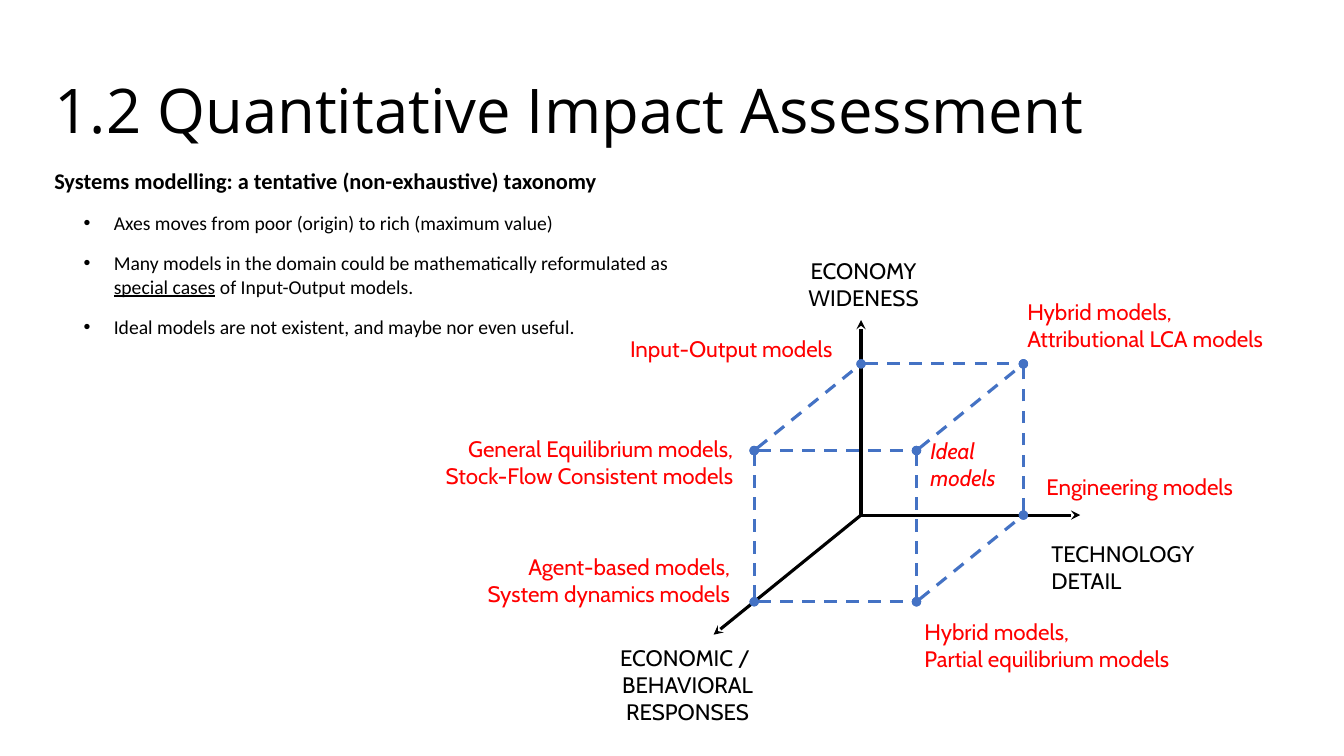
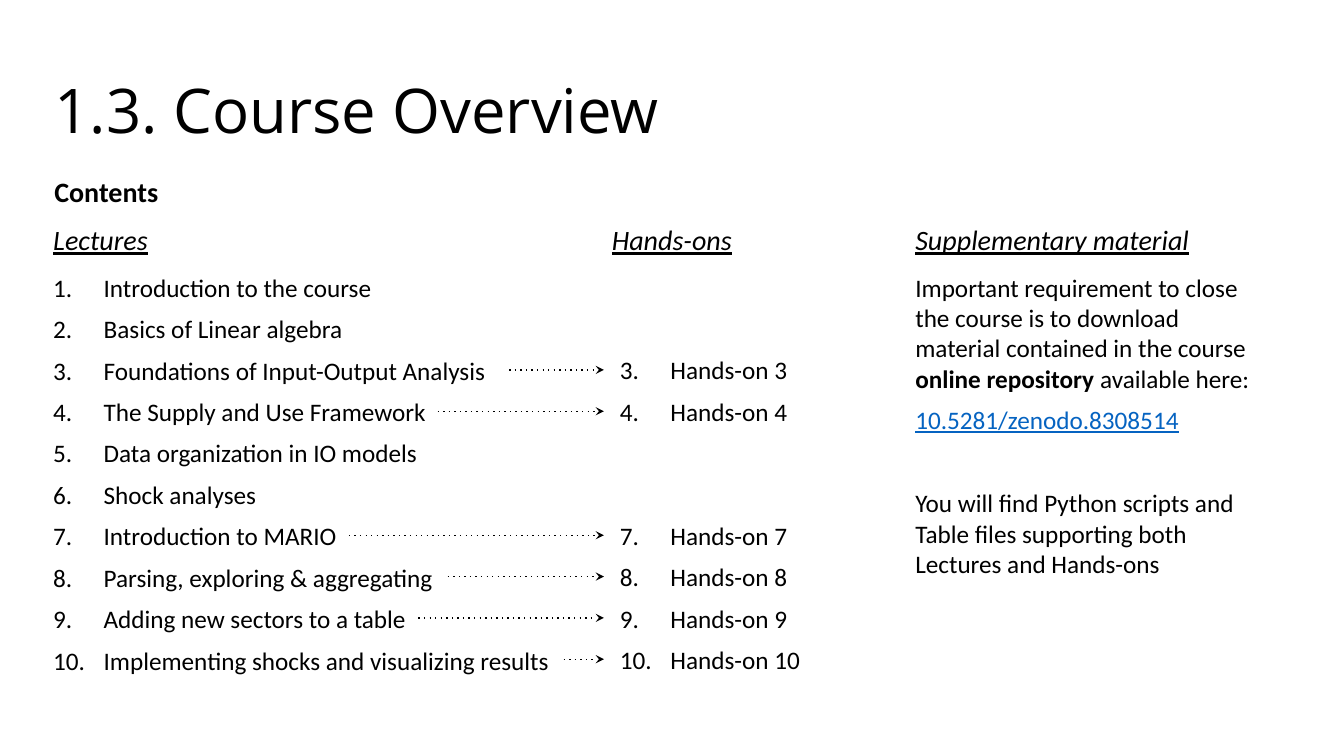
from dataclasses import dataclass
from itertools import product

from lxml.etree import SubElement as Sub
from pptx import Presentation
from pptx.dml.color import RGBColor as Rgb
from pptx.enum.shapes import MSO_CONNECTOR as Conn
from pptx.enum.text import MSO_ANCHOR as Anchor, MSO_AUTO_SIZE as Fit, PP_ALIGN as Align
from pptx.oxml.ns import qn
from pptx.util import Inches, Pt


@dataclass(frozen=True)
class Theme:
    black: Rgb = Rgb(0, 0, 0)
    red: Rgb = Rgb(0xFF, 0, 0)
    blue: Rgb = Rgb(0x44, 0x72, 0xC4)
    link: Rgb = Rgb(0x05, 0x63, 0xC1)
    head: str = "Open Sans"
    body: str = "Calibri"
    note: str = "Cabin"
    big: int = 44
    sub: int = 20
    text: int = 18
    mid: int = 16
    small: int = 14


T = Theme()
TITLE = dict(name=T.head, size=T.big)
LEAD = dict(name=T.body, size=T.mid, bold=True)
POINT = dict(name=T.body, size=T.small)
TOPIC = dict(name=T.body, size=T.sub, bold=True)
HEAD = dict(name=T.body, size=T.sub, italic=True, underline=True)
BODY = dict(name=T.body, size=T.text)
AXIS = dict(name=T.note, size=T.mid)
MODEL = dict(name=T.note, size=T.mid, color=T.red)


# Shared helpers
def style(font, form):
    font.color.rgb = form.get("color", T.black)
    for key, val in form.items():
        if key != "color":
            setattr(font, key, Pt(val) if key == "size" else val)


def mark(para, indent, hang, tag, **attrs):
    """Give a paragraph a hanging bullet or number."""
    props = para._p.get_or_add_pPr()
    props.set("marL", str(Inches(indent)))
    props.set("indent", str(-Inches(hang)))
    Sub(props, qn("a:buFont")).set("typeface", "Arial" if tag == "buChar" else "+mj-lt")
    item = Sub(props, qn("a:" + tag))
    for key, val in attrs.items():
        item.set(key, str(val))


def fill(para, runs, form, gap=0, align=Align.LEFT):
    """Write a string, or a list of (text, format changes), in a paragraph."""
    para.alignment = align
    para.space_before = Pt(gap)
    for text, more in [(runs, {})] if isinstance(runs, str) else runs:
        run = para.add_run()
        run.text = text
        style(run.font, form | more)


def frame(slide, x, y, w, h):
    area = slide.shapes.add_textbox(*map(Inches, (x, y, w, h))).text_frame
    area.word_wrap = True
    return area


def paras(area, count):
    """Yield the given number of paragraphs, the first one included."""
    for i in range(count):
        yield area.add_paragraph() if i else area.paragraphs[0]


def label(slide, box, text, form, align=Align.LEFT):
    rows = text.split("\n")
    area = frame(slide, *box)
    for para, row in zip(paras(area, len(rows)), rows):
        fill(para, row, form, align=align)


def rule(slide, start, end, color, width, dash="solid", head="none", tail="stealth"):
    line = slide.shapes.add_connector(Conn.STRAIGHT, *map(Inches, (*start, *end)))
    line.line.color.rgb = color
    line.line.width = Pt(width)
    props = line._element.spPr
    stroke = props.find(qn("a:ln"))
    Sub(stroke, qn("a:prstDash")).set("val", dash)
    for tag, kind in (("a:headEnd", head), ("a:tailEnd", tail)):
        Sub(stroke, qn(tag)).set("type", kind)
    Sub(props, qn("a:effectLst"))


def page(deck, text):
    slide = deck.slides.add_slide(deck.slide_layouts[5])
    title = slide.shapes.title
    for key, val in dict(left=0.44, top=0.01, width=12, height=1.5).items():
        setattr(title, key, Inches(val))
    area = title.text_frame
    area.auto_size = Fit.NONE
    area.vertical_anchor = Anchor.BOTTOM
    area.paragraphs[0].line_spacing = 0.9
    fill(area.paragraphs[0], text, TITLE)
    return slide


# Slide 1: taxonomy of models
POINTS = [
    "Axes moves from poor (origin) to rich (maximum value)",
    [("Many models in the domain could be mathematically reformulated as ", {}),
     ("special cases", dict(underline=True)),
     (" of Input-Output models.", {})],
    "Ideal models are not existent, and maybe nor even useful.",
]
# Left, top and width from the corner of the cube
LABELS = [
    (2.85, 1.7, 1.82, "TECHNOLOGY\nDETAIL", AXIS, Align.LEFT),
    (0.42, -1.11, 1.33, "ECONOMY\nWIDENESS", AXIS, Align.CENTER),
    (-2.04, 2.73, 2.76, "ECONOMIC / \nBEHAVIORAL\nRESPONSES", AXIS, Align.CENTER),
    (-1.33, -0.33, 2.51, "Input-Output models", MODEL, Align.LEFT),
    (-3.8, 0.66, 3.69, "General Equilibrium models,\nStock-Flow Consistent models",
     MODEL, Align.RIGHT),
    (1.65, 0.68, 0.95, "Ideal\nmodels", MODEL | dict(italic=True), Align.LEFT),
    (-3.11, 1.83, 2.97, "Agent-based models,\nSystem dynamics models", MODEL, Align.RIGHT),
    (2.8, 1.03, 2.51, "Engineering models", MODEL, Align.LEFT),
    (2.61, -0.7, 2.78, "Hybrid models,\nAttributional LCA models", MODEL, Align.LEFT),
    (1.59, 2.47, 2.97, "Hybrid models,\nPartial equilibrium models", MODEL, Align.LEFT),
]


def intro(slide, box):
    area = frame(slide, *box)
    first, *rest = paras(area, len(POINTS) + 1)
    fill(first, "Systems modelling: a tentative (non-exhaustive) taxonomy", LEAD)
    for para, runs in zip(rest, POINTS):
        mark(para, 0.59, 0.3, "buChar", char="•")
        fill(para, runs, POINT, gap=12)


def cube(slide, box):
    x, y, w, h = box
    dx, dy = 1.06, 0.86  # slant of the depth edges
    wide, high = w - dx, h - dy

    def spot(tech, econ, deep):
        return x + dx + tech * wide - deep * dx, y + high - econ * high + deep * dy

    # Axes
    root = spot(0, 0, 0)
    for tip in ((1.35, 0, 0), (0, 1.29, 0), (0, 0, 1.38)):
        rule(slide, root, spot(*tip), T.black, 2.25)

    # Edges that do not touch the origin
    for axis, side in product(range(3), product((0, 1), repeat=2)):
        if any(side):
            ends = [spot(*side[:axis], bit, *side[axis:]) for bit in (0, 1)]
            start, end = ends[::-1] if axis == 2 else ends
            rule(slide, start, end, T.blue, 2.25, "dash", "oval", "oval")

    # Names of axes and corners
    for left, top, width, text, form, align in LABELS:
        label(slide, (x + left, y + top, width, 0.64), text, form, align)


def models(deck):
    slide = page(deck, "1.2 Quantitative Impact Assessment")
    intro(slide, (0.44, 1.61, 6.44, 1.82))
    cube(slide, (7.48, 3.61, 2.67, 2.36))


# Slide 2: course plan
TALKS = [
    "Introduction to the course", "Basics of Linear algebra",
    "Foundations of Input-Output Analysis", "The Supply and Use Framework",
    "Data organization in IO models", "Shock analyses", "Introduction to MARIO",
    "Parsing, exploring & aggregating", "Adding new sectors to a table",
    "Implementing shocks and visualizing results",
]
LABS = [(3, 4), (7, 8, 9, 10)]
# Lecture number and left end of its arrow
LINKS = {3: 5.05, 4: 4.34, 7: 3.46, 8: 4.44, 9: 4.15, 10: 5.59}
ROW = 0.41
GAP = 8


def series(slide, box, items, first=1):
    area = frame(slide, *box)
    for i, para in enumerate(paras(area, len(items))):
        mark(para, 0.5, 0.5, "buAutoNum", type="arabicPeriod", startAt=first)
        fill(para, items[i], BODY, gap=GAP if i else 0)


def talks(slide, box):
    x, y, w, h = box
    label(slide, (x, y, w, 0.44), "Lectures", HEAD)
    series(slide, (x, y + 0.49, w, h - 0.49), TALKS)


def labs(slide, box):
    x, y, w, h = box
    label(slide, (x, y, w, 0.44), "Hands-ons", HEAD)
    for group in LABS:
        top = y + 0.49 + (group[0] - 1) * ROW
        series(slide, (x + 0.08, top, w - 0.08, len(group) * ROW + 0.1),
               [f"Hands-on {num}" for num in group], group[0])
    for num, left in LINKS.items():
        row = y + 0.69 + (num - 1) * ROW
        rule(slide, (left, row), (x + 0.02, row), T.black, 1, "dot")


def extra(slide, box):
    x, y, w, h = box
    label(slide, (x, y, w, 0.44), "Supplementary material", HEAD)
    area = frame(slide, x, y + 0.49, w, h - 0.49)
    need, link, find = paras(area, 3)
    fill(need, [
        ("Important requirement to close the course is to download material "
         "contained in the course ", {}),
        ("online repository ", dict(bold=True)),
        ("available here:", {}),
    ], BODY)
    fill(link, "10.5281/zenodo.8308514", BODY | dict(color=T.link, underline=True), GAP)
    fill(find, "You will find Python scripts and Table files supporting both "
         "Lectures and Hands-ons", BODY, gap=38)


def course(deck):
    slide = page(deck, "1.3. Course Overview")
    label(slide, (0.44, 1.68, 12.31, 0.44), "Contents", TOPIC)
    talks(slide, (0.43, 2.16, 5.93, 4.63))
    labs(slide, (5.97, 2.16, 2.2, 4.63))
    extra(slide, (8.98, 2.16, 3.69, 4.07))


def main():
    deck = Presentation()
    deck.slide_width, deck.slide_height = Inches(13.33), Inches(7.5)
    models(deck)
    course(deck)
    deck.save("out.pptx")


if __name__ == "__main__":
    main()
